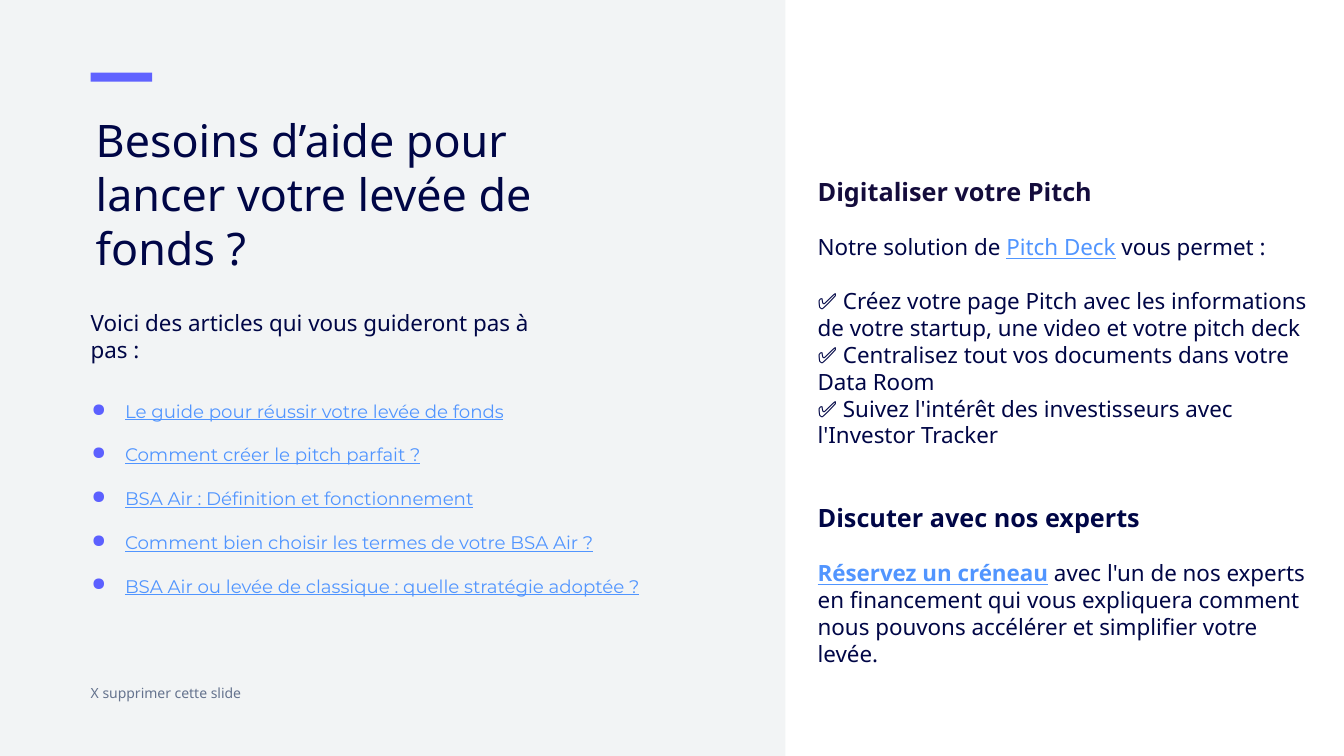
from lxml import etree
from pptx import Presentation
from pptx.dml.color import RGBColor
from pptx.enum import shapes
from pptx.oxml.ns import qn
from pptx.util import Inches, Pt

PALE = RGBColor(0xF2, 0xF4, 0xF5)
WHITE = RGBColor(0xFF, 0xFF, 0xFF)
ACCENT = RGBColor(0x60, 0x62, 0xFF)
NAVY = RGBColor(0x00, 0x06, 0x46)
PLUM = RGBColor(0x14, 0x0C, 0x3C)
LINK = RGBColor(0x51, 0x95, 0xFF)
GREY = RGBColor(0x65, 0x73, 0x8E)
BULLET = "5C60FF"


def add_text(p, content, size=16, color=NAVY, font="Noto Sans", bold=False, link=False, before=0, spacing=None):
    p.space_before = Pt(before)
    p.line_spacing = spacing or Pt(1.2 * size)
    r = p.add_run()
    r.text = content
    r.font.size = Pt(size)
    r.font.name = font
    r.font.bold = bold
    r.font.underline = link
    r.font.color.rgb = LINK if link else color


def add_box(x, y, w, h):
    tf = s.shapes.add_textbox(Inches(x), Inches(y), Inches(w), Inches(h)).text_frame
    tf.word_wrap = True
    tf.margin_left = tf.margin_right = tf.margin_top = tf.margin_bottom = 0
    return tf


prs = Presentation()
prs.slide_width, prs.slide_height = Inches(13.33), Inches(7.5)
s = prs.slides.add_slide(prs.slide_layouts[6])
s.background.fill.solid()
s.background.fill.fore_color.rgb = PALE

for x, y, w, h, color in [(7.79, 0, 5.54, 7.5, WHITE), (0.9, 0.72, 0.61, 0.09, ACCENT)]:
    sp = s.shapes.add_shape(shapes.MSO_SHAPE.RECTANGLE, Inches(x), Inches(y), Inches(w), Inches(h))
    sp.shadow.inherit = False
    sp.fill.solid()
    sp.fill.fore_color.rgb = color
    sp.line.fill.background()

for x, y, w, h, content, size, color in [
    (0.95, 1.12, 4.97, 1.66, "Besoins d’aide pour lancer votre levée de fonds ?", 32, NAVY),
    (0.9, 3.07, 4.5, 0.35, "Voici des articles qui vous guideront pas à pas :", 16, NAVY),
    (0.9, 6.79, 1.69, 0.24, "X supprimer cette slide", 10, GREY),
]:
    add_text(add_box(x, y, w, h).paragraphs[0], content, size=size, color=color)

articles = [
    "Le guide pour réussir votre levée de fonds",
    "Comment créer le pitch parfait ?",
    "BSA Air : Définition et fonctionnement",
    "Comment bien choisir les termes de votre BSA Air ?",
    "BSA Air ou levée de classique : quelle stratégie adoptée ?",
]
tf = add_box(0.74, 3.75, 5.84, 2.75)
for i, article in enumerate(articles):
    p = tf.add_paragraph() if i else tf.paragraphs[0]
    add_text(p, article, size=13, font="Montserrat", link=True, before=0 if i else 12, spacing=2.0)
    pPr = p._p.get_or_add_pPr()
    pPr.set("marL", str(Inches(0.5)))
    pPr.set("indent", str(Inches(-0.33)))
    buClr = etree.SubElement(pPr, qn("a:buClr"))
    etree.SubElement(buClr, qn("a:srgbClr"), val=BULLET)
    etree.SubElement(pPr, qn("a:buChar"), char="●")

GAP = 19.2
offer = [
    (0, [("Digitaliser votre Pitch", dict(size=18, color=PLUM, bold=True))]),
    (GAP, [("Notre solution de ", {}), ("Pitch Deck", dict(link=True)), (" vous permet :", {})]),
    (GAP, [("✅ Créez votre page Pitch avec les informations de votre startup, une video et votre pitch deck", {})]),
    (0, [("✅ Centralisez tout vos documents dans votre Data Room", {})]),
    (0, [("✅ Suivez l'intérêt des investisseurs avec l'Investor Tracker", {})]),
    (2 * GAP, [("Discuter avec nos experts", dict(size=18, bold=True))]),
    (GAP, [
        ("Réservez un créneau", dict(bold=True, link=True)),
        (" avec l'un de nos experts en financement qui vous expliquera comment "
         "nous pouvons accélérer et simplifier votre levée.", {}),
    ]),
]
tf = add_box(8.11, 1.75, 4.88, 5.2)
for i, (before, runs) in enumerate(offer):
    p = tf.add_paragraph() if i else tf.paragraphs[0]
    for content, style in runs:
        add_text(p, content, before=before, **style)

prs.save("out.pptx")
